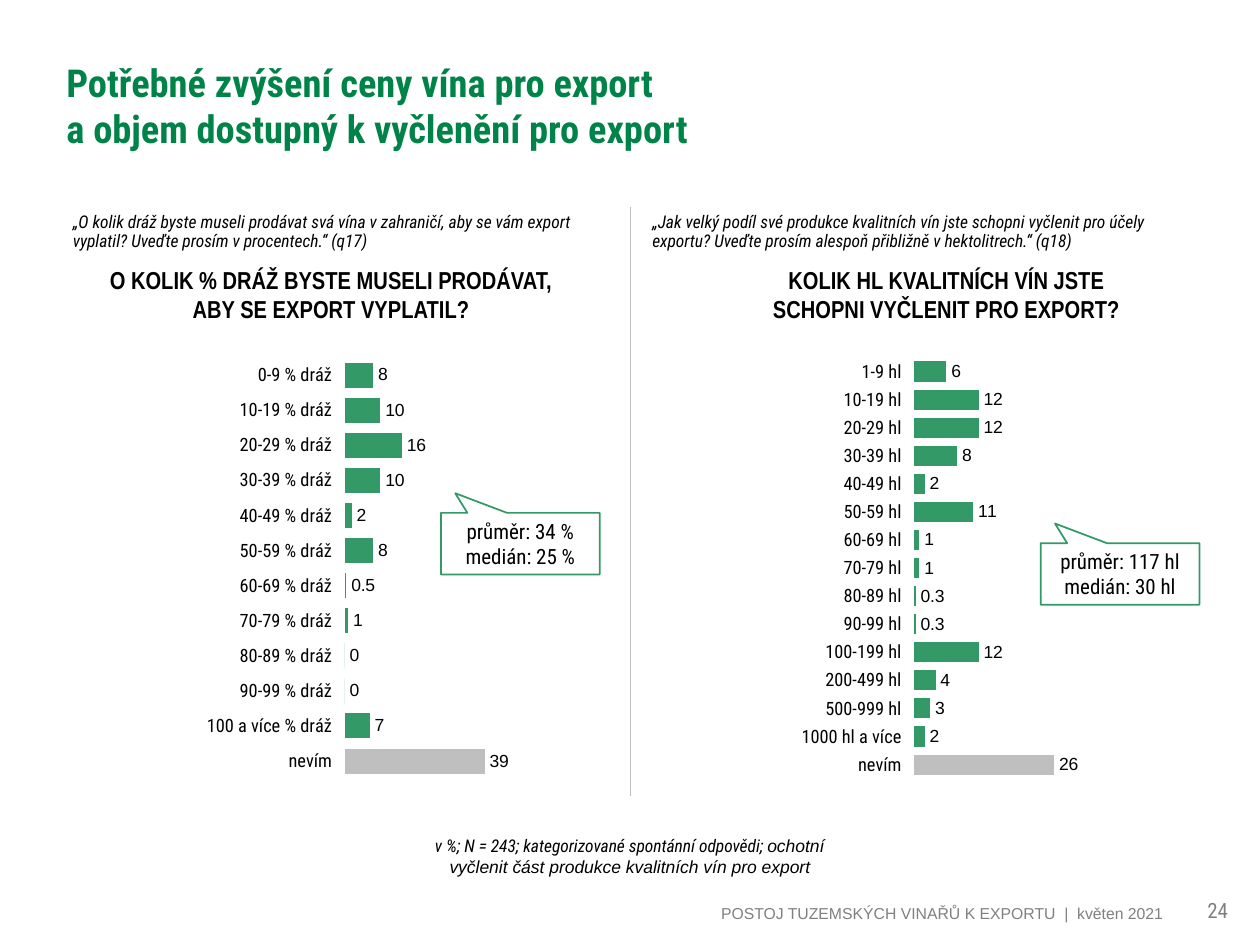
import pptx
import pptx.chart.data
import pptx.dml.color
import pptx.enum.chart
import pptx.enum.shapes
import pptx.enum.text
import pptx.oxml
import pptx.oxml.ns
import pptx.util
from pptx.util import Cm

CONDENSED, ARIAL, NARROW = "Roboto Condensed", "Arial", "Arial Narrow"
BLACK, GREY, LIGHT_GREY = "000000", "808080", "BFBFBF"
GREEN, TITLE_GREEN = "339966", "008348"
ALIGN = pptx.enum.text.PP_ALIGN
ANCHOR = pptx.enum.text.MSO_ANCHOR

PRICE_RISE = {
    "0-9 % dráž": 8, "10-19 % dráž": 10, "20-29 % dráž": 16,
    "30-39 % dráž": 10, "40-49 % dráž": 2, "50-59 % dráž": 8,
    "60-69 % dráž": 0.5, "70-79 % dráž": 1, "80-89 % dráž": 0,
    "90-99 % dráž": 0, "100 a více % dráž": 7, "nevím": 39,
}
EXPORT_VOLUME = {
    "1-9 hl": 6, "10-19 hl": 12, "20-29 hl": 12, "30-39 hl": 8,
    "40-49 hl": 2, "50-59 hl": 11, "60-69 hl": 1, "70-79 hl": 1,
    "80-89 hl": 0.3, "90-99 hl": 0.3, "100-199 hl": 12, "200-499 hl": 4,
    "500-999 hl": 3, "1000 hl a více": 2, "nevím": 26,
}


def rgb(value):
    return pptx.dml.color.RGBColor.from_string(value)


def style_font(font, size, name=CONDENSED, color=BLACK, bold=False, italic=False):
    font.size = pptx.util.Pt(size)
    font.name = name
    font.bold = bold
    font.italic = italic
    font.color.rgb = rgb(color)


def add_run(paragraph, text, size, **style):
    run = paragraph.add_run()
    run.text = text
    style_font(run.font, size, **style)


def add_text_box(slide, box, align=ALIGN.LEFT, anchor=ANCHOR.TOP):
    """Add a wrapping text box and return its first paragraph."""
    frame = slide.shapes.add_textbox(*map(Cm, box)).text_frame
    frame.word_wrap = True
    frame.vertical_anchor = anchor
    paragraph = frame.paragraphs[0]
    paragraph.alignment = align
    return paragraph


def add_question(slide, left, text):
    question = add_text_box(slide, (left, 4.17, 11.48, 1.02))
    question.line_spacing = 0.9
    add_run(question, text, 10, italic=True)


def add_heading(slide, left, width, text):
    heading = add_text_box(slide, (left, 5.21, width, 1.45), ALIGN.CENTER)
    add_run(heading, text, 14, name=NARROW, bold=True)


def set_plot_layout(chart, x, y, width, height):
    plot_area = chart._chartSpace.chart.plotArea
    for old in plot_area.findall(pptx.oxml.ns.qn("c:layout")):
        plot_area.remove(old)
    sizes = "".join(f'<c:{tag} val="{value}"/>' for tag, value in
                    (("x", x), ("y", y), ("w", width), ("h", height)))
    plot_area.insert(0, pptx.oxml.parse_xml(
        f'<c:layout {pptx.oxml.ns.nsdecls("c")}><c:manualLayout>'
        '<c:layoutTarget val="inner"/><c:xMode val="edge"/><c:yMode val="edge"/>'
        f'{sizes}</c:manualLayout></c:layout>'))


def add_answer_chart(slide, left, answers, maximum):
    data = pptx.chart.data.CategoryChartData()
    data.categories = list(answers)
    data.add_series("Series 1", list(answers.values()))
    chart = slide.shapes.add_chart(
        pptx.enum.chart.XL_CHART_TYPE.BAR_CLUSTERED,
        Cm(left), Cm(6.78), Cm(11.15), Cm(9.3), data).chart
    chart.has_legend = False
    chart.has_title = False
    style_font(chart.font, 7.4, name=ARIAL, bold=True)
    set_plot_layout(chart, 0.484, 0.046, 0.39, 0.913)

    # Axes
    categories = chart.category_axis
    categories.reverse_order = True
    categories.format.line.fill.background()
    style_font(categories.tick_labels.font, 10.5)
    values = chart.value_axis
    values.minimum_scale, values.maximum_scale = 0, maximum
    values.major_unit = 20
    values.has_major_gridlines = False
    values.visible = False

    # Bars, with "nevím" set apart in grey
    plot = chart.plots[0]
    plot.gap_width = 40
    plot.vary_by_categories = False
    series = plot.series[0]
    series.invert_if_negative = False
    dont_know = series.points[len(answers) - 1]
    for part, color in ((series, GREEN), (dont_know, LIGHT_GREY)):
        part.format.fill.solid()
        part.format.fill.fore_color.rgb = rgb(color)

    # Value labels
    labels = series.data_labels
    labels.show_value = True
    labels.number_format = "General"
    labels.number_format_is_linked = False
    labels.position = pptx.enum.chart.XL_LABEL_POSITION.OUTSIDE_END
    style_font(labels.font, 10, name=ARIAL)


def add_callout(slide, left, top, lines):
    callout = slide.shapes.add_shape(
        pptx.enum.shapes.MSO_SHAPE.RECTANGULAR_CALLOUT,
        Cm(left), Cm(top), Cm(3.2), Cm(1.24))
    callout.adjustments[0] = -0.41
    callout.adjustments[1] = -0.82
    callout.shadow.inherit = False
    callout.fill.solid()
    callout.fill.fore_color.rgb = rgb("FFFFFF")
    callout.line.color.rgb = rgb(GREEN)
    callout.line.width = pptx.util.Pt(1)
    frame = callout.text_frame
    frame.word_wrap = True
    frame.vertical_anchor = ANCHOR.MIDDLE
    for index, line in enumerate(lines):
        paragraph = frame.add_paragraph() if index else frame.paragraphs[0]
        paragraph.alignment = ALIGN.CENTER
        add_run(paragraph, line, 12)


def add_divider(slide):
    divider = slide.shapes.add_connector(
        pptx.enum.shapes.MSO_CONNECTOR.STRAIGHT,
        Cm(12.7), Cm(4.17), Cm(12.7), Cm(16.05))
    divider.line.color.rgb = rgb(LIGHT_GREY)
    divider.line.width = pptx.util.Pt(0.5)
    divider._element.spPr.append(pptx.oxml.parse_xml(
        f'<a:effectLst {pptx.oxml.ns.nsdecls("a")}/>'))


def main():
    deck = pptx.Presentation()
    deck.slide_width, deck.slide_height = Cm(25.4), Cm(19.05)
    slide = deck.slides.add_slide(deck.slide_layouts[6])

    # Footer and page number
    footer = add_text_box(slide, (1.24, 17.73, 22.45, 0.99), ALIGN.RIGHT, ANCHOR.BOTTOM)
    add_run(footer, "POSTOJ TUZEMSKÝCH VINAŘŮ K EXPORTU  |  květen 2021", 9,
            name=ARIAL, color=GREY)
    page = add_text_box(slide, (23.7, 17.73, 1.7, 0.99), ALIGN.CENTER, ANCHOR.BOTTOM)
    add_run(page, "24", 12, color=GREY)

    # Title
    title = add_text_box(slide, (1.09, 0.53, 18.21, 3.18), anchor=ANCHOR.MIDDLE)
    add_run(title, "Potřebné zvýšení ceny vína pro export", 22, color=TITLE_GREEN, bold=True)
    title.add_line_break()
    add_run(title, "a objem dostupný k vyčlenění pro export", 22, color=TITLE_GREEN, bold=True)

    # Left half: price rise
    add_question(slide, 1.22, "„O kolik dráž byste museli prodávat svá vína v zahraničí, "
                 "aby se vám export vyplatil? Uveďte prosím v procentech.“ (q17)")
    add_heading(slide, 1.9, 9.55,
                "O KOLIK % DRÁŽ BYSTE MUSELI PRODÁVAT, ABY SE EXPORT VYPLATIL?")
    add_answer_chart(slide, 1.55, PRICE_RISE, 60)
    add_callout(slide, 8.89, 10.34, ("průměr: 34 %", "medián: 25 %"))

    # Right half: volume available
    add_question(slide, 12.9, "„Jak velký podíl své produkce kvalitních vín jste schopni "
                 "vyčlenit pro účely exportu? Uveďte prosím alespoň přibližně "
                 "v hektolitrech.“ (q18)")
    add_heading(slide, 15.09, 7.98,
                "KOLIK HL KVALITNÍCH VÍN JSTE SCHOPNI VYČLENIT PRO EXPORT?")
    add_answer_chart(slide, 13.03, EXPORT_VOLUME, 40)
    add_callout(slide, 20.98, 10.95, ("průměr: 117 hl", "medián: 30 hl"))

    # Divider and note on the sample
    add_divider(slide)
    note = add_text_box(slide, (7.92, 16.71, 9.55, 1.12), ALIGN.CENTER)
    add_run(note, "v %; N = 243; kategorizované spontánní odpovědi; ", 10, italic=True)
    add_run(note, "ochotní vyčlenit část produkce kvalitních vín pro export", 10,
            name=ARIAL, italic=True)

    deck.save("out.pptx")


if __name__ == "__main__":
    main()
